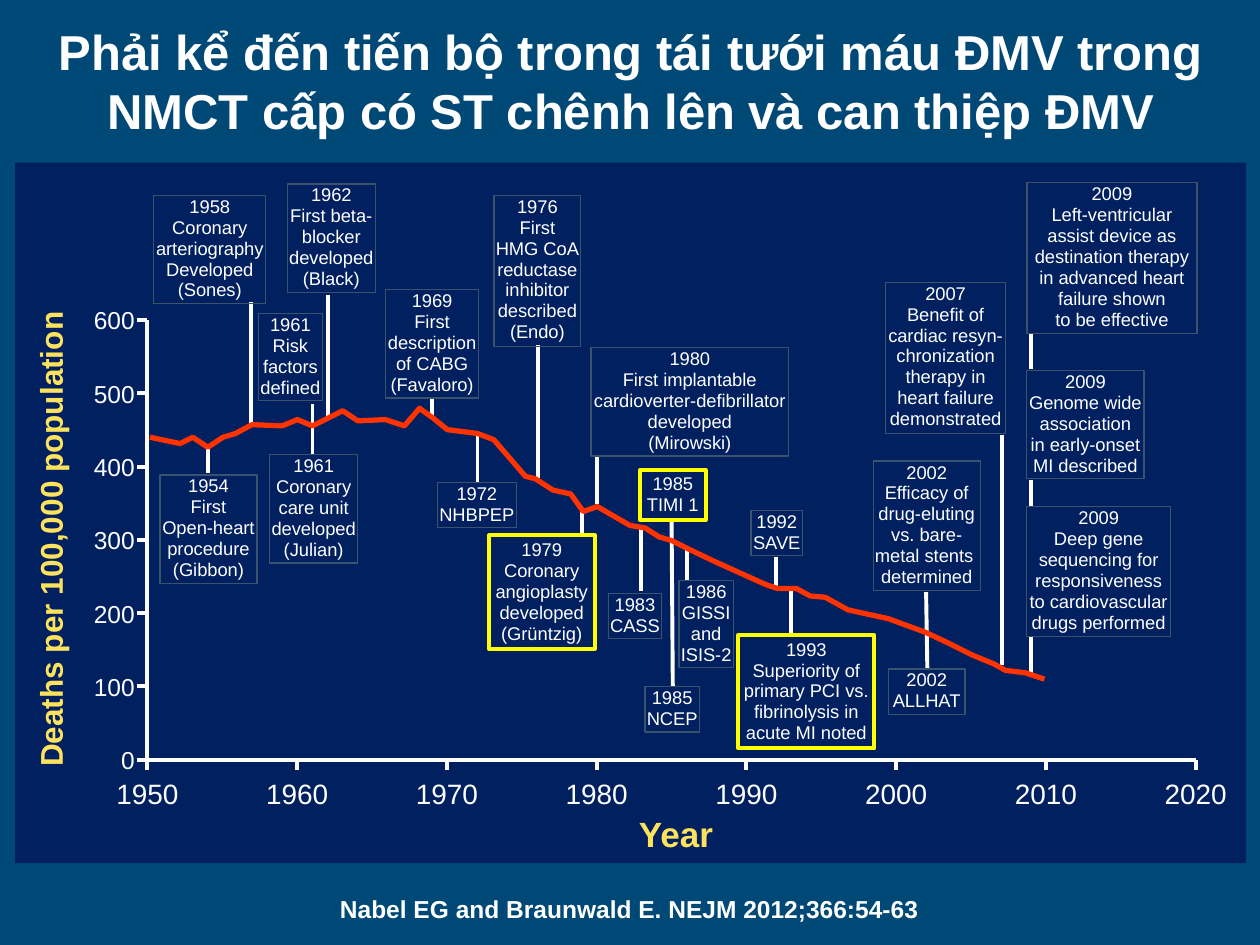
from lxml.etree import SubElement
from pptx import Presentation
from pptx.dml.color import RGBColor
from pptx.enum.shapes import MSO_CONNECTOR as Link, MSO_SHAPE as Kind
from pptx.enum.text import MSO_ANCHOR as Anchor, PP_ALIGN as Align
from pptx.oxml.ns import qn
from pptx.util import Inches, Pt

WHITE, GOLD, YELLOW, GREY = "FFFFFF", "FDE25E", "FFFF00", "39536E"
LEFT, BASE, WIDE, HIGH = 1.17, 6.03, 8.32, 3.49

STEMS = [
    (1.65, 3.55, 1.65, 3.75), (2.48, 3.21, 2.48, 3.61),
    (3.79, 3.44, 3.79, 3.83), (5.09, 4.18, 5.09, 4.69),
    (5.33, 4.12, 5.34, 5.45), (4.62, 4.05, 4.62, 4.24),
    (5.45, 4.36, 5.45, 4.61), (6.28, 4.67, 6.28, 5.05),
    (7.35, 4.7, 7.36, 5.31), (8.18, 5.05, 8.18, 5.34),
    (8.18, 3.81, 8.18, 4.02), (8.18, 2.65, 8.18, 2.93),
    (7.95, 3.45, 7.95, 5.28), (6.16, 4.42, 6.16, 4.66),
    (4.74, 3.62, 4.74, 4), (4.27, 2.74, 4.27, 3.79),
    (3.43, 3.16, 3.43, 3.31), (2.6, 2.34, 2.6, 3.3),
    (1.99, 2.4, 1.99, 3.39),
]

CURVE = [
    (1.19, 3.47), (1.43, 3.52), (1.53, 3.47), (1.65, 3.55), (1.77, 3.47),
    (1.87, 3.44), (2, 3.37), (2.24, 3.38), (2.36, 3.33), (2.48, 3.38),
    (2.72, 3.26), (2.84, 3.34), (3.06, 3.33), (3.21, 3.38), (3.33, 3.24),
    (3.44, 3.32), (3.55, 3.41), (3.79, 3.44), (3.92, 3.49), (4.17, 3.78),
    (4.25, 3.8), (4.39, 3.89), (4.53, 3.92), (4.63, 4.06), (4.74, 4.02),
    (5, 4.17), (5.12, 4.19), (5.23, 4.26), (5.33, 4.29), (5.47, 4.36),
    (5.68, 4.46), (6.08, 4.64), (6.17, 4.67), (6.32, 4.67), (6.43, 4.73),
    (6.55, 4.74), (6.73, 4.84), (7.05, 4.91), (7.35, 5.02), (7.54, 5.11),
    (7.72, 5.2), (7.89, 5.27), (7.98, 5.32), (8.14, 5.34), (8.29, 5.39),
]

NOTES = [
    (1.27, 3.77, 0.77, 0.86, "1954|First|Open-heart|procedure|(Gibbon)"),
    (2.14, 3.61, 0.7, 0.86, "1961|Coronary|care unit|developed|(Julian)"),
    (3.47, 3.83, 0.63, 0.36, "1972|NHBPEP"),
    (5.12, 5.45, 0.43, 0.36, "1985|NCEP"),
    (4.83, 4.71, 0.42, 0.36, "1983|CASS"),
    (5.39, 4.61, 0.43, 0.69, "1986|GISSI|and\nISIS-2"),
    (7.05, 5.31, 0.61, 0.36, "2002|ALLHAT"),
    (7.03, 2.24, 0.95, 1.2, "2007|Benefit of|cardiac resyn-|chronization|"
     "therapy in|heart failure\ndemonstrated"),
    (6.93, 3.66, 0.85, 1.03, "2002|Efficacy of|drug-eluting|vs. bare-|"
     "metal stents |determined"),
    (5.96, 4.05, 0.41, 0.36, "1992|SAVE"),
    (2.28, 1.46, 0.7, 0.86, "1962|First beta-\nblocker|developed|(Black)"),
    (4.69, 2.76, 1.57, 0.86, "1980|First implantable|"
     "cardioverter-defibrillator|developed|(Mirowski)"),
    (3.06, 2.3, 0.74, 0.86, "1969|First|description|of CABG\n(Favaloro)"),
    (3.92, 1.55, 0.69, 1.2, "1976|First|HMG CoA\nreductase|inhibitor|"
     "described|(Endo)"),
    (2.05, 2.49, 0.51, 0.69, "1961|Risk|factors|defined"),
    (1.22, 1.55, 0.89, 0.86, "1958|Coronary|arteriography\nDeveloped|(Sones)"),
    (8.15, 4.02, 1.14, 1.03, "2009|Deep gene|sequencing for|responsiveness|"
     "to cardiovascular|drugs performed"),
    (8.15, 2.94, 0.93, 0.86, "2009|Genome wide|association|in early-onset|"
     "MI described"),
    (8.15, 1.45, 1.35, 1.2, "2009|Left-ventricular|assist device as|"
     "destination therapy\nin advanced heart|failure shown|to be effective"),
]

KEYS = [
    (5.86, 5.04, 1.08, 0.9, "1993|Superiority of|primary PCI vs.|"
     "fibrinolysis in\nacute MI noted"),
    (3.88, 4.25, 0.84, 0.9, "1979|Coronary|angioplasty|developed|(Grüntzig)"),
    (5.08, 3.73, 0.52, 0.4, "1985|TIMI 1"),
]


def color(code):
    return RGBColor.from_string(code)


def write(shape, text, size, hue=WHITE, bold=False, pad=0, wrap=False,
          anchor=Anchor.TOP, align=Align.CENTER, gap=None):
    frame = shape.text_frame
    frame.text = text.replace("|", "\v")
    form = {"word_wrap": wrap, "vertical_anchor": anchor}
    for side in ("left", "right", "top", "bottom"):
        form["margin_" + side] = Inches(pad)
    for key, val in form.items():
        setattr(frame, key, val)
    for para in frame.paragraphs:
        para.alignment, para.line_spacing = align, gap
        for run in para.runs:
            font = {"name": "Arial", "size": Pt(size), "bold": bold}
            for key, val in font.items():
                setattr(run.font, key, val)
            run.font.color.rgb = color(hue)
        for br in para._p.iter(qn("a:br")):
            SubElement(br, qn("a:rPr"), sz=str(int(size * 100)))


def label(slide, box, text, size, turn=0, **form):
    shape = slide.shapes.add_textbox(*map(Inches, box))
    shape.rotation = turn
    write(shape, text, size, **form)


def panel(slide, box, fill):
    shape = slide.shapes.add_shape(Kind.RECTANGLE, *map(Inches, box))
    shape.shadow.inherit = False
    shape.fill.solid()
    shape.fill.fore_color.rgb = color(fill)
    shape.line.fill.background()


def note(slide, box, text, hue, width, **form):
    shape = slide.shapes.add_shape(Kind.RECTANGLE, *map(Inches, box))
    shape.shadow.inherit = False
    shape.fill.background()
    shape.line.color.rgb = color(hue)
    shape.line.width = Pt(width)
    write(shape, text, 10.5, gap=0.95, **form)


def rule(slide, *ends):
    line = slide.shapes.add_connector(Link.STRAIGHT, *map(Inches, ends))
    line.line.color.rgb = color(WHITE)
    line.line.width = Pt(2.25)
    SubElement(line._element.spPr, qn("a:effectLst"))


def trend(slide, spots):
    first, *rest = [(Inches(x), Inches(y)) for x, y in spots]
    pen = slide.shapes.build_freeform(*first)
    pen.add_line_segments(rest, close=False)
    shape = pen.convert_to_shape()
    shape.shadow.inherit = False
    shape.fill.background()
    shape.line.color.rgb = color("FF3300")
    shape.line.width = Pt(3)


def axes(slide):
    rule(slide, LEFT, BASE - HIGH, LEFT, BASE)
    rule(slide, LEFT, BASE, LEFT + WIDE, BASE)
    for i in range(7):
        y = BASE - HIGH * i / 6
        rule(slide, LEFT - 0.08, y, LEFT, y)
        label(slide, (0.67, y - 0.12, 0.4, 0.24), str(i * 100), 14,
              wrap=True, anchor=Anchor.MIDDLE, align=Align.RIGHT)
    for i in range(8):
        x = LEFT + WIDE * i / 7
        rule(slide, x, BASE, x, BASE + 0.08)
        label(slide, (x - 0.25, 6.16, 0.5, 0.27), str(1950 + i * 10), 16)
    label(slide, (5.07, 6.45, 0.59, 0.34), "Year", 20, hue=GOLD, bold=True)
    label(slide, (-1.43, 4.13, 3.66, 0.3), "Deaths per 100,000 population",
          18, turn=270, hue=GOLD, bold=True)


def main():
    deck = Presentation()
    deck.slide_width, deck.slide_height = Inches(10), Inches(7.5)
    slide = deck.slides.add_slide(deck.slide_layouts[6])
    slide.background.fill.solid()
    slide.background.fill.fore_color.rgb = color("004976")
    panel(slide, (0.12, 1.29, 9.77, 5.56), "002060")
    axes(slide)
    for stem in STEMS:
        rule(slide, *stem)
    trend(slide, CURVE)
    for *box, text in NOTES:
        note(slide, box, text, GREY, 0.75, pad=0.01)
    for *box, text in KEYS:
        note(slide, box, text, YELLOW, 2.25, pad=0.03, anchor=Anchor.MIDDLE)
    label(slide, (2.59, 7.05, 4.81, 0.34),
          "Nabel EG and Braunwald E. NEJM 2012;366:54-63", 14,
          bold=True, pad=0.05)
    label(slide, (0.14, 0.12, 9.73, 0.83),
          "Phải kể đến tiến bộ trong tái tưới máu ĐMV trong "
          "NMCT cấp có ST chênh lên và can thiệp ĐMV", 28,
          bold=True, pad=0.05, wrap=True)
    deck.save("out.pptx")


if __name__ == "__main__":
    main()
